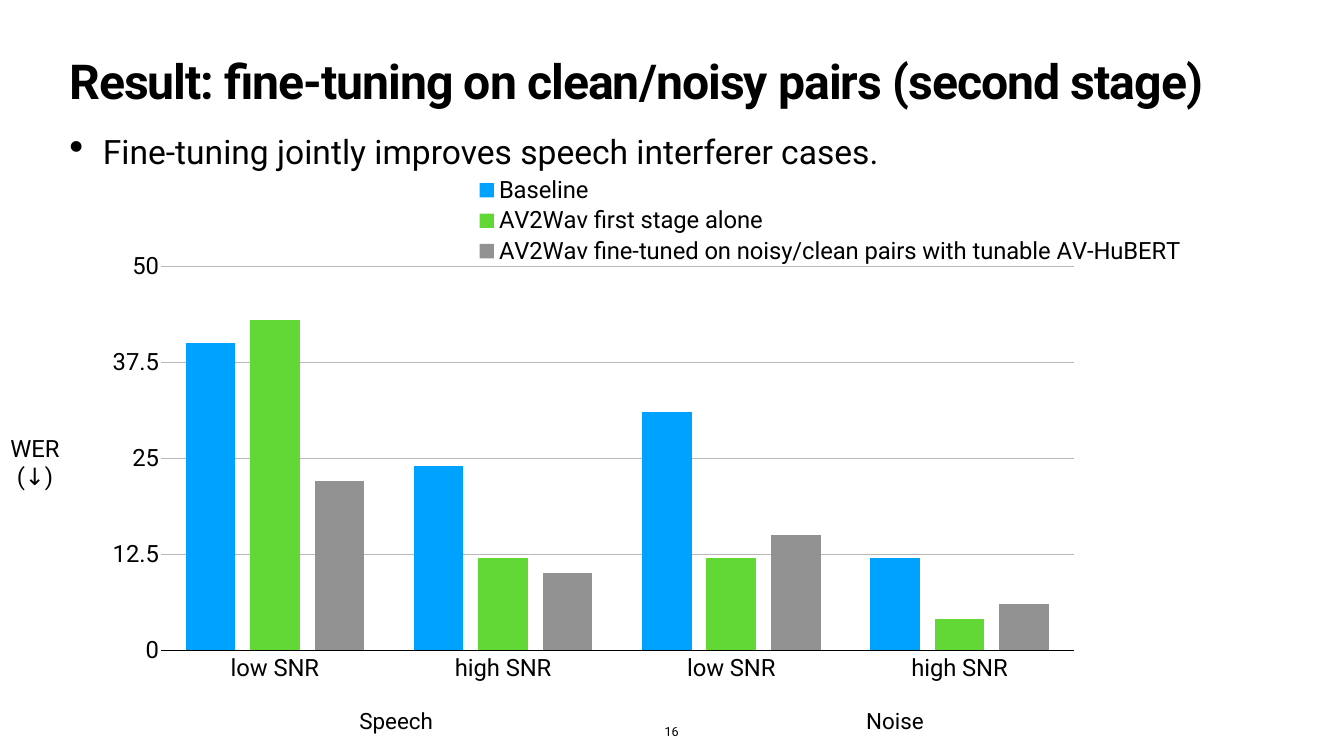
from lxml import etree
from pptx import Presentation
from pptx.chart.data import CategoryChartData
from pptx.dml.color import RGBColor
from pptx.enum.chart import XL_CHART_TYPE, XL_LEGEND_POSITION, XL_TICK_LABEL_POSITION, XL_TICK_MARK
from pptx.enum.text import MSO_ANCHOR, PP_ALIGN
from pptx.oxml import parse_xml
from pptx.oxml.ns import nsdecls, qn
from pptx.util import Pt

COLUMNS = XL_CHART_TYPE.COLUMN_CLUSTERED
LEGEND_TOP = XL_LEGEND_POSITION.TOP
LABELS_LOW = XL_TICK_LABEL_POSITION.LOW
NO_TICK = XL_TICK_MARK.NONE
TOP, MIDDLE, BOTTOM = MSO_ANCHOR.TOP, MSO_ANCHOR.MIDDLE, MSO_ANCHOR.BOTTOM
LEFT, CENTER = PP_ALIGN.LEFT, PP_ALIGN.CENTER

THEME = {
    "font": "Roboto",
    "text": RGBColor(0x00, 0x00, 0x00),
    "grid": RGBColor(0xB8, 0xB8, 0xB8),
    "series": [RGBColor(0x00, 0xA2, 0xFF), RGBColor(0x61, 0xD8, 0x36), RGBColor(0x92, 0x92, 0x92)],
    "title": Pt(68.8), "body": Pt(48), "chart": Pt(34), "group": Pt(32), "number": Pt(18),
}


def style_font(font, size, bold=False):
    values = {"name": THEME["font"], "size": size, "bold": bold}
    for name, value in values.items():
        setattr(font, name, value)
    font.color.rgb = THEME["text"]


def add_text(text, left, top, width, height, size, align=CENTER, anchor=MIDDLE, wrap=False, bold=False):
    box = page.shapes.add_textbox(Pt(left), Pt(top), Pt(width), Pt(height))
    frame = box.text_frame
    values = {"word_wrap": wrap, "vertical_anchor": anchor}
    values.update({f"margin_{side}": Pt(4) for side in ("left", "right", "top", "bottom")})
    for name, value in values.items():
        setattr(frame, name, value)
    para = frame.paragraphs[0]
    para.alignment = align
    span = para.add_run()
    span.text = text
    style_font(span.font, size, bold)
    return para, span


deck = Presentation()
deck.slide_width, deck.slide_height = Pt(1920), Pt(1080)
page = deck.slides.add_slide(deck.slide_layouts[6])

# Title
para, span = add_text("Result: fine-tuning on clean/noisy pairs (second stage)",
                      95, 85, 1730, 113, THEME["title"], LEFT, TOP, wrap=True, bold=True)
para.line_spacing = 0.8
span.font._element.set("spc", "-140")

# Bullet
para, span = add_text("Fine-tuning jointly improves speech interferer cases.",
                      95, 190, 1730, 650, THEME["body"], LEFT, TOP, wrap=True)
para.line_spacing = 0.9
properties = para._p.get_or_add_pPr()
properties.set("marL", str(Pt(48)))
properties.set("indent", str(Pt(-48)))
etree.SubElement(properties, qn("a:buSzPct")).set("val", "123000")
etree.SubElement(properties, qn("a:buChar")).set("char", "•")

# Chart
data = CategoryChartData()
data.categories = ["low SNR", "high SNR", "low SNR", "high SNR"]
for name, values in [
    ("Baseline", (40, 24, 31, 12)),
    ("AV2Wav first stage alone", (43, 12, 12, 4)),
    ("AV2Wav fine-tuned on noisy/clean pairs with tunable AV-HuBERT", (22, 10, 15, 6)),
]:
    data.add_series(name, values)
chart = page.shapes.add_chart(COLUMNS, Pt(137), Pt(248), Pt(1626), Pt(747), data).chart
chart.has_title = False
style_font(chart.font, THEME["chart"])
plot = chart.plots[0]
for name, value in {"gap_width": 100, "overlap": -30, "vary_by_categories": False}.items():
    setattr(plot, name, value)
for series, color in zip(plot.series, THEME["series"]):
    series.format.fill.solid()
    series.format.fill.fore_color.rgb = color

# Axes
for axis in (chart.category_axis, chart.value_axis):
    axis.major_tick_mark = axis.minor_tick_mark = NO_TICK
    style_font(axis.tick_labels.font, THEME["chart"])
chart.category_axis.tick_label_position = LABELS_LOW
scale = chart.value_axis
for name, value in {"minimum_scale": 0, "maximum_scale": 50, "major_unit": 12.5}.items():
    setattr(scale, name, value)
scale.tick_labels.number_format = "General"
scale.tick_labels.number_format_is_linked = False
scale.format.line.fill.background()
for line, color in ((chart.category_axis.format.line, THEME["text"]),
                    (scale.major_gridlines.format.line, THEME["grid"])):
    line.width = Pt(1)
    line.color.rgb = color

# Legend, and fixed places for it and the plot area
chart.has_legend = True
legend = chart.legend
legend.position = LEGEND_TOP
legend.include_in_layout = False
style_font(legend.font, THEME["chart"])
plot_area = chart._chartSpace.chart.plotArea
for parent, target, (x, y, w, h) in (
    (plot_area, '<c:layoutTarget val="inner"/>', (0.057, 0.178, 0.802, 0.733)),
    (legend._element, "", (0.33, 0.0, 0.63, 0.18)),
):
    for old in parent.findall(qn("c:layout")):
        parent.remove(old)
    layout = parse_xml(
        f'<c:layout {nsdecls("c")}><c:manualLayout>{target}'
        '<c:xMode val="edge"/><c:yMode val="edge"/>'
        f'<c:x val="{x}"/><c:y val="{y}"/><c:w val="{w}"/><c:h val="{h}"/>'
        '</c:manualLayout></c:layout>')
    if parent is plot_area:
        parent.insert(0, layout)
    else:
        parent.find(qn("c:legendPos")).addnext(layout)

# Group labels, axis label and page number
add_text("Speech", 507, 1007, 118, 45, THEME["group"])
add_text("Noise", 1233, 1007, 91, 45, THEME["group"])
add_text("WER (↓)", 6, 614, 88, 92, THEME["chart"], wrap=True)
add_text("16", 945, 1030, 29, 30, THEME["number"], anchor=BOTTOM)

deck.save("out.pptx")
